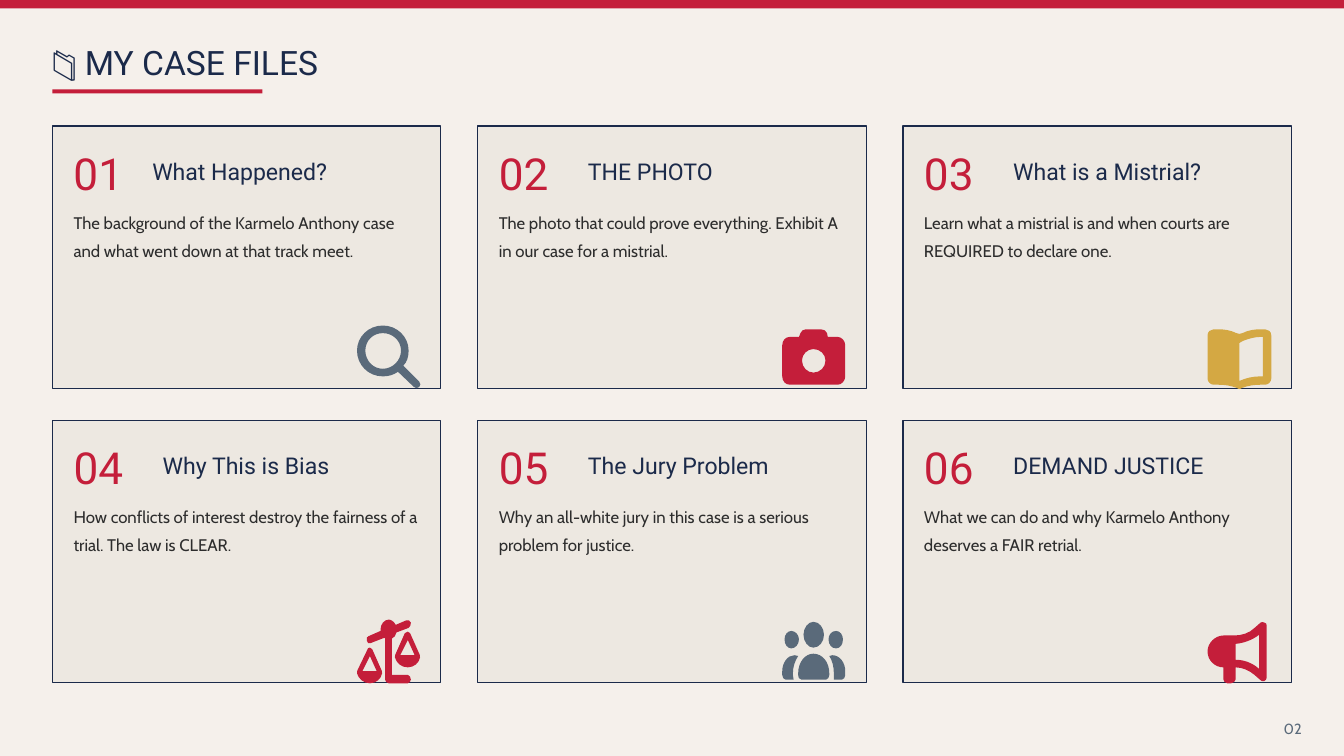
from dataclasses import dataclass

from lxml import etree
from pptx import Presentation
from pptx.dml.color import RGBColor
from pptx.enum.shapes import MSO_SHAPE
from pptx.enum.text import MSO_ANCHOR, MSO_AUTO_SIZE, PP_ALIGN
from pptx.oxml.ns import qn
from pptx.util import Inches, Pt

RECT = MSO_SHAPE.RECTANGLE
TOP, MIDDLE = MSO_ANCHOR.TOP, MSO_ANCHOR.MIDDLE
LEFT, RIGHT = PP_ALIGN.LEFT, PP_ALIGN.RIGHT
TITLE_ONLY = 5


@dataclass(frozen=True)
class Theme:
    paper: str = "F5F0EB"
    card: str = "EDE8E1"
    navy: str = "1B2A4A"
    red: str = "C41E3A"
    slate: str = "5A6A7A"
    gold: str = "D4A843"
    ink: str = "2D2D2D"
    head_font: str = "Roboto"
    body_font: str = "Cabin"
    title_size: int = 32
    number_size: int = 42
    heading_size: int = 22
    body_size: int = 16
    page_size: int = 14


T = Theme()

# The slide is a grid of 1280 by 720 units; all lengths below are in units
WIDTH, HEIGHT = Inches(17.78), Inches(10)
GRID_W = 1280
UNIT = WIDTH / GRID_W
MARGIN = 50
COLUMNS = 3
CARD_W, CARD_H = 370, 250
STEP_X = (GRID_W - 2 * MARGIN - CARD_W) / (COLUMNS - 1)
STEP_Y = 280
CARDS_TOP = 120
PAD = 20
ROW_H = 50
ICON = 60

# Icon outlines on a square of 83: M move, L line, C Bézier curve, Z close
ICON_GRID = 83
COMMANDS = {"M": "a:moveTo", "L": "a:lnTo", "C": "a:cubicBezTo", "Z": "a:close"}
MAGNIFIER = """M 68 33 C 68 41 66 48 61 53 L 82 74 C 84 76 84 79 82 81 C 80 83 77 83 75 81
L 54 61 C 48 65 42 67 34 67 C 15 67 0 52 0 33 C 0 15 15 0 34 0 C 53 0 68 15 68 33 Z
M 34 57 C 47 57 58 46 58 33 C 58 20 47 10 34 10 C 21 10 11 20 11 33 C 11 46 21 57 34 57 Z"""
CAMERA = """M 24 10 L 22 15 L 10 15 C 4 15 0 20 0 26 L 0 67 C 0 73 4 78 10 78 L 73 78
C 78 78 83 73 83 67 L 83 26 C 83 20 78 15 73 15 L 60 15 L 59 10 C 58 7 55 5 51 5
L 31 5 C 28 5 25 7 24 10 Z
M 41 31 C 50 31 57 38 57 46 C 57 55 50 62 41 62 C 33 62 26 55 26 46 C 26 38 33 31 41 31 Z"""
BOOK = """M 42 23 L 42 73 L 42 73 C 51 69 60 67 70 67 L 73 67 L 73 15 L 70 15
C 63 15 56 17 50 19 C 47 20 45 21 42 23 Z
M 38 10 L 42 11 L 46 10 C 54 6 62 5 70 5 L 76 5 C 80 5 84 8 84 13 L 84 70
C 84 74 80 78 76 78 L 70 78 C 62 78 54 79 46 82 L 44 83 C 43 84 41 84 40 83 L 38 82
C 30 79 22 78 14 78 L 8 78 C 4 78 0 74 0 70 L 0 13 C 0 8 4 5 8 5 L 14 5 C 22 5 30 6 38 10 Z"""
SCALES = """M 68 11 C 70 10 71 7 71 4 C 70 1 67 0 65 1 L 51 7 C 49 3 45 0 42 0
C 36 0 31 6 31 13 C 31 14 31 14 31 15 L 15 22 C 13 22 12 25 13 28 C 13 31 16 32 18 31
L 36 24 C 36 25 37 25 37 25 L 37 79 C 37 81 39 84 42 84 L 67 84 C 69 84 71 81 71 79
C 71 76 69 73 67 73 L 46 73 L 46 25 C 49 24 51 21 52 17 L 68 11 Z
M 57 47 L 67 27 L 76 47 L 57 47 Z
M 67 63 C 75 63 82 57 83 50 C 83 48 83 46 82 45 L 70 18 C 69 17 68 16 67 16
C 65 16 64 17 63 18 L 51 45 C 50 46 50 48 50 50 C 52 57 58 63 67 63 Z
M 17 48 L 26 68 L 7 68 L 17 48 Z
M 0 71 C 2 78 9 84 17 84 C 25 84 32 78 33 71 C 33 69 33 67 32 66 L 20 39
C 19 38 18 37 17 37 C 15 37 14 38 14 39 L 1 66 C 0 67 0 69 0 71 Z"""
PEOPLE = """M 41 3 C 49 3 55 11 55 20 C 55 29 49 37 41 37 C 34 37 28 29 28 20 C 28 11 34 3 41 3 Z
M 12 15 C 17 15 22 20 22 26 C 22 33 17 38 12 38 C 7 38 3 33 3 26 C 3 20 7 15 12 15 Z
M 0 68 C 0 57 7 47 16 47 C 18 47 20 48 21 48 C 17 54 14 62 14 71 L 14 73
C 14 75 15 77 15 79 L 4 79 C 2 79 0 76 0 73 L 0 68 Z
M 68 79 C 68 77 68 75 68 73 L 68 71 C 68 62 66 54 62 48 C 63 48 65 47 66 47
C 76 47 83 57 83 68 L 83 73 C 83 76 81 79 79 79 L 68 79 Z
M 61 26 C 61 20 65 15 71 15 C 76 15 80 20 80 26 C 80 33 76 38 71 38 C 65 38 61 33 61 26 Z
M 21 71 C 21 56 30 45 41 45 C 53 45 62 56 62 71 L 62 73 C 62 76 60 79 58 79 L 25 79
C 22 79 21 76 21 73 L 21 71 Z"""
MEGAPHONE = """M 75 4 C 77 4 78 6 78 8 L 78 76 C 78 78 77 80 75 81 C 73 82 71 81 70 80 L 62 73
C 55 67 46 63 37 63 L 37 79 C 37 81 34 84 31 84 L 26 84 C 23 84 21 81 21 79 L 21 63
C 10 63 0 54 0 42 C 0 31 10 21 21 21 L 35 21 C 45 21 55 18 62 11 L 70 4 C 71 3 73 3 75 4 Z
M 37 53 L 37 53 C 48 53 59 57 68 65 L 68 20 C 59 27 48 31 37 32 L 37 53 Z"""

# Heading, description, icon, icon colour, width of the number
CARDS = [
    ("What Happened?", "The background of the Karmelo Anthony case and what went down "
     "at that track meet.", MAGNIFIER, T.slate, 70),
    ("THE PHOTO", "The photo that could prove everything. Exhibit A in our case for "
     "a mistrial.", CAMERA, T.red, 80),
    ("What is a Mistrial?", "Learn what a mistrial is and when courts are REQUIRED to "
     "declare one.", BOOK, T.gold, 80),
    ("Why This is Bias", "How conflicts of interest destroy the fairness of a trial. "
     "The law is CLEAR.", SCALES, T.red, 80),
    ("The Jury Problem", "Why an all-white jury in this case is a serious problem for "
     "justice.", PEOPLE, T.slate, 80),
    ("DEMAND JUSTICE", "What we can do and why Karmelo Anthony deserves a FAIR retrial.",
     MEGAPHONE, T.red, 80),
]


def units(*lengths):
    return [round(n * UNIT) for n in lengths]


def paint(shape, fill, line=None):
    shape.shadow.inherit = False
    shape.fill.solid()
    shape.fill.fore_color.rgb = RGBColor.from_string(fill)
    if line:
        shape.line.color.rgb = RGBColor.from_string(line)
        shape.line.width = Pt(1)
    else:
        shape.line.fill.background()


def add_rect(s, x, y, w, h, fill, line=None):
    paint(s.shapes.add_shape(RECT, *units(x, y, w, h)), fill, line)


def set_text(shape, text, *, size, color, font=T.head_font, align=LEFT, anchor=MIDDLE,
             spacing=1.2, wrap=False):
    tf = shape.text_frame
    tf.auto_size = MSO_AUTO_SIZE.NONE
    tf.word_wrap = wrap
    tf.vertical_anchor = anchor
    tf.margin_left = tf.margin_right = tf.margin_top = tf.margin_bottom = 0
    p = tf.paragraphs[0]
    p.alignment = align
    p.line_spacing = spacing
    r = p.add_run()
    r.text = text
    r.font.size = Pt(size)
    r.font.name = font
    r.font.color.rgb = RGBColor.from_string(color)


def add_text(s, text, x, y, w, h, **style):
    set_text(s.shapes.add_textbox(*units(x, y, w, h)), text, **style)


def add_icon(s, outline, x, y, color):
    """Make a square freeform, then give it the outline with its true curves."""
    builder = s.shapes.build_freeform(0, 0, scale=ICON * UNIT / ICON_GRID)
    builder.add_line_segments([(ICON_GRID, 0), (ICON_GRID, ICON_GRID), (0, ICON_GRID)])
    shape = builder.convert_to_shape(*units(x, y))
    paint(shape, color)
    geometry = next(shape.element.iter(qn("a:path")))
    for child in list(geometry):
        geometry.remove(child)
    numbers = []
    for token in outline.split():
        if token in COMMANDS:
            segment = etree.SubElement(geometry, qn(COMMANDS[token]))
            continue
        numbers.append(token)
        if len(numbers) == 2:
            etree.SubElement(segment, qn("a:pt"), x=numbers[0], y=numbers[1])
            numbers = []


def add_card(s, index, heading, description, icon, color, number_w):
    row, col = divmod(index, COLUMNS)
    x, y = MARGIN + col * STEP_X, CARDS_TOP + row * STEP_Y
    left, right = x + PAD, x + CARD_W - PAD
    heading_x = left + number_w + 5
    add_rect(s, x, y, CARD_W, CARD_H, T.card, T.navy)
    add_text(s, f"{index + 1:02}", left, y + 15, number_w, ROW_H,
             size=T.number_size, color=T.red)
    add_text(s, heading, heading_x, y + 15, right - heading_x, ROW_H,
             size=T.heading_size, color=T.navy)
    add_text(s, description, left, y + 75, right - left, 70, size=T.body_size,
             color=T.ink, font=T.body_font, anchor=TOP, spacing=1.4, wrap=True)
    add_icon(s, icon, right - ICON, y + CARD_H - ICON, color)


def add_title(s, text):
    title = s.shapes.title
    title.left, title.top, title.width, title.height = units(MARGIN, 30, 500, ROW_H)
    set_text(title, text, size=T.title_size, color=T.navy)
    add_rect(s, MARGIN, 85, 200, 4, T.red)


def main():
    prs = Presentation()
    prs.slide_width, prs.slide_height = WIDTH, HEIGHT
    s = prs.slides.add_slide(prs.slide_layouts[TITLE_ONLY])
    s.background.fill.solid()
    s.background.fill.fore_color.rgb = RGBColor.from_string(T.paper)
    add_rect(s, 0, 0, GRID_W, 8, T.red)
    add_title(s, "📁 MY CASE FILES")
    for index, card in enumerate(CARDS):
        add_card(s, index, *card)
    add_text(s, "02", 1190, 680, 50, 25, size=T.page_size, color=T.slate,
             font=T.body_font, align=RIGHT)
    prs.save("out.pptx")


if __name__ == "__main__":
    main()
